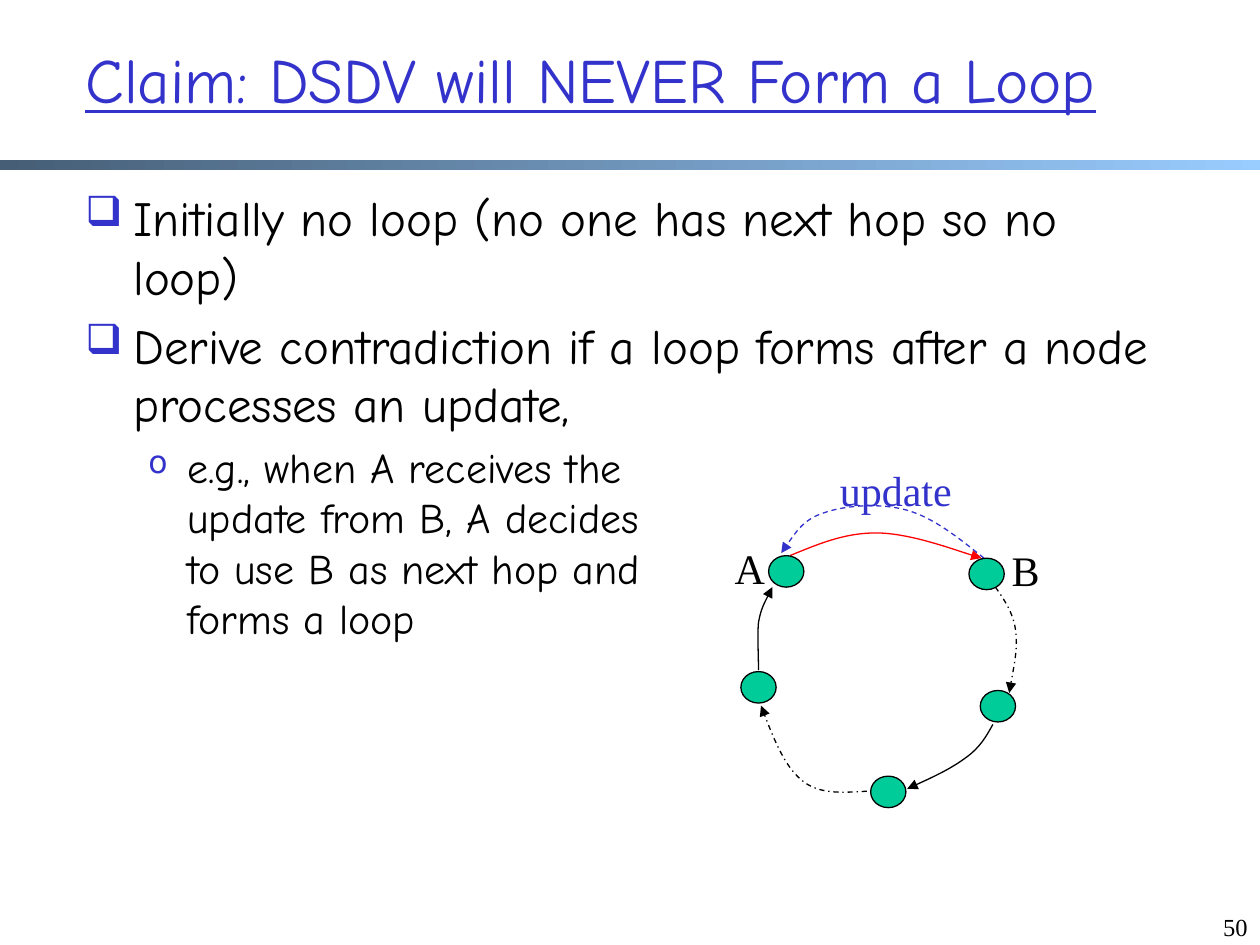
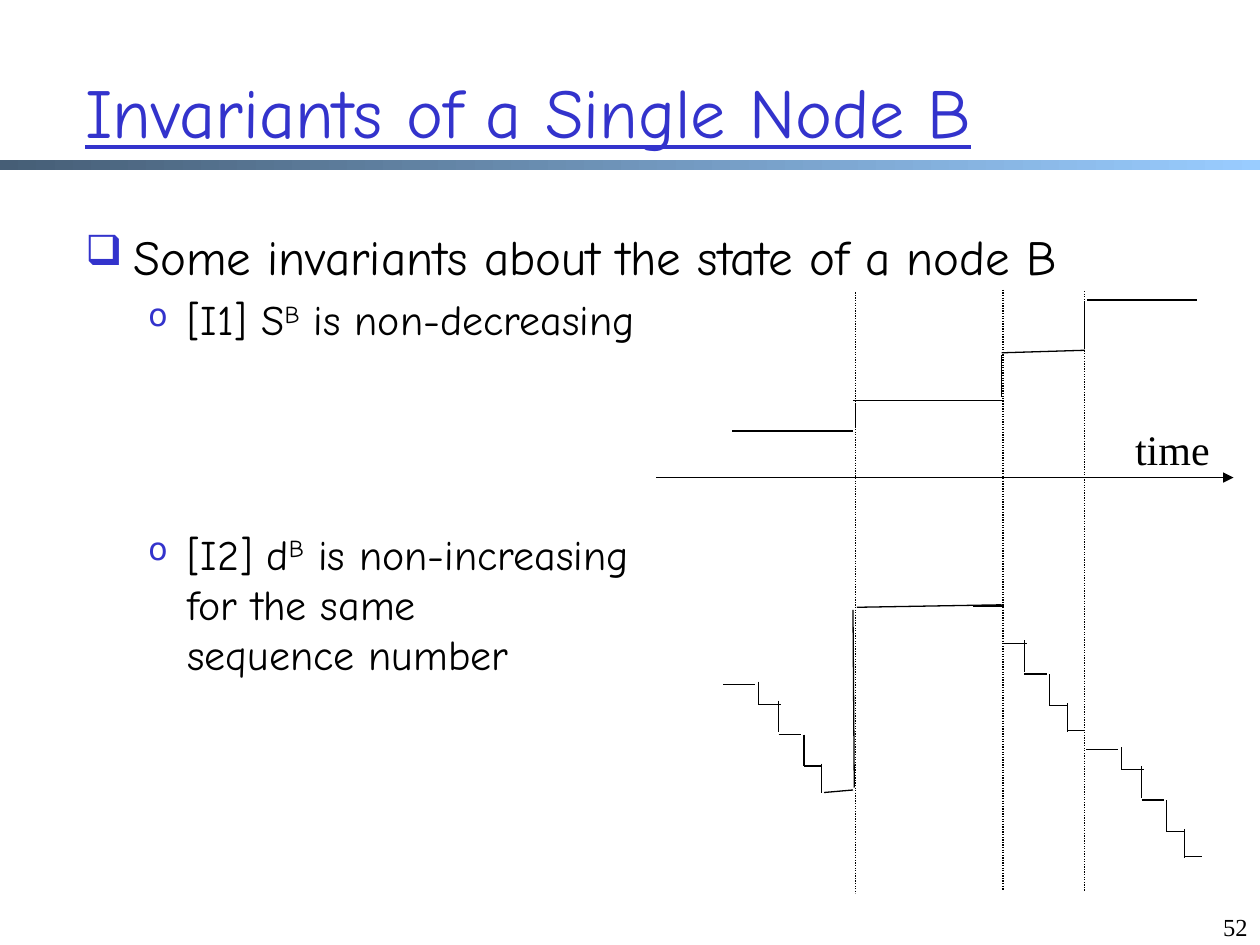
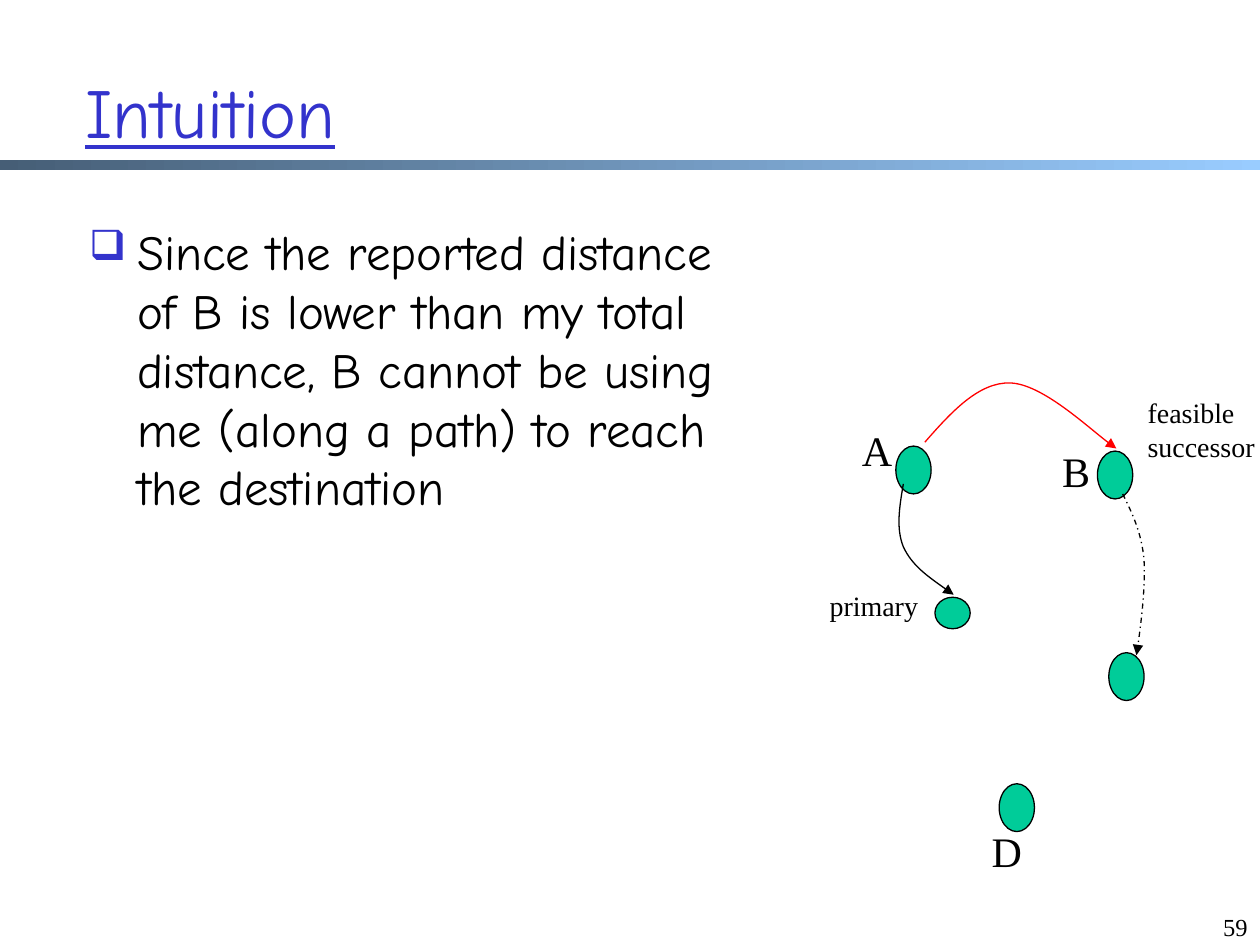
import lxml.etree
import pptx
import pptx.dml.color
import pptx.enum.dml
import pptx.enum.shapes
import pptx.enum.text
import pptx.oxml.ns
import pptx.util

COLUMNS, ROWS = 100, 75
INK, BLUE, RED, GREEN = "000000", "3333CC", "FF0000", "00CC99"
BAND_DARK, BAND_LIGHT = "465E76", "99CCFF"
HEADING_FONT, LABEL_FONT = "Comic Neue", "Times New Roman"
DASH = pptx.enum.dml.MSO_LINE.DASH
DASH_DOT = pptx.enum.dml.MSO_LINE.DASH_DOT
DOTTED = pptx.enum.dml.MSO_LINE.ROUND_DOT
LEFT, CENTER, RIGHT = (pptx.enum.text.PP_ALIGN.LEFT, pptx.enum.text.PP_ALIGN.CENTER,
                       pptx.enum.text.PP_ALIGN.RIGHT)
LEVELS = [
    {"char": "❑", "scale": 85, "size": 28, "margin": 0.38, "hang": 0.38},
    {"char": "o", "scale": 75, "size": 24, "margin": 0.81, "hang": 0.31},
]
STAIR = [
    (0, 0, 2.5, 0), (2.8, -0.2, 2.8, 1.6),
    (2.8, 1.6, 4.6, 1.6), (4.4, 1.3, 4.4, 3.8),
    (4.4, 4, 6.2, 4), (6.4, 4, 6.4, 6.5),
    (6.4, 6.5, 7.8, 6.5), (7.8, 6.3, 7.8, 8.6),
    (7.8, 8.5, 9.2, 8.5),
]


def color(value):
    return pptx.dml.color.RGBColor.from_string(value)


def add_xml(parent, tag, **attributes):
    return lxml.etree.SubElement(parent, pptx.oxml.ns.qn(tag), attributes)


class Deck:
    def __init__(self):
        self.presentation = pptx.Presentation()
        self.presentation.slide_width = pptx.util.Inches(10)
        self.presentation.slide_height = pptx.util.Inches(7.5)
        self.slide = None

    def x(self, columns):
        return round(self.presentation.slide_width * columns / COLUMNS)

    def y(self, rows):
        return round(self.presentation.slide_height * rows / ROWS)

    def box(self, left, top, width, height):
        return self.x(left), self.y(top), self.x(width), self.y(height)

    def start(self, title, number, area=(5.8, 2.5, 87.8, 12.5), size=40):
        self.slide = self.presentation.slides.add_slide(self.presentation.slide_layouts[6])
        self.band()
        self.label(title, area, size, BLUE, LEFT, HEADING_FONT, underline=True,
                   anchor=pptx.enum.text.MSO_ANCHOR.MIDDLE)
        self.label(str(number), (92.5, 71.9, 7.5, 3.1), 14, align=RIGHT)

    def band(self):
        band = self.slide.shapes.add_shape(
            pptx.enum.shapes.MSO_SHAPE.RECTANGLE, *self.box(0, 12.7, COLUMNS, 0.8))
        band.shadow.inherit = False
        band.line.fill.background()
        band.fill.gradient()
        band.fill.gradient_angle = 0
        for stop, shade in zip(band.fill.gradient_stops, (BAND_DARK, BAND_LIGHT)):
            stop.color.rgb = color(shade)

    def text_frame(self, area):
        frame = self.slide.shapes.add_textbox(*self.box(*area)).text_frame
        frame.word_wrap = True
        return frame

    def style(self, font, name, size, shade):
        font.name = name
        font.size = pptx.util.Pt(size)
        font.color.rgb = color(shade)

    def label(self, text, area, size=24, shade=INK, align=CENTER, font=LABEL_FONT,
              underline=None, anchor=pptx.enum.text.MSO_ANCHOR.TOP):
        frame = self.text_frame(area)
        frame.vertical_anchor = anchor
        frame.text = text
        paragraph = frame.paragraphs[0]
        paragraph.alignment = align
        for run in paragraph.runs:
            self.style(run.font, font, size, shade)
            run.font.underline = underline

    def bullets(self, area, items):
        frame = self.text_frame(area)
        for index, (level, text, *gap) in enumerate(items):
            paragraph = frame.add_paragraph() if index else frame.paragraphs[0]
            self.bullet(paragraph, level, *gap)
            for part_index, part in enumerate(text.split("^")):
                for line_index, line in enumerate(part.split("\n")):
                    if line_index:
                        paragraph.add_line_break()
                    run = paragraph.add_run()
                    run.text = line
                    self.style(run.font, HEADING_FONT, LEVELS[level]["size"], INK)
                    if part_index % 2:
                        run.font._element.set("baseline", "30000")

    def bullet(self, paragraph, level, gap=None):
        mark = LEVELS[level]
        paragraph.level = level
        properties = paragraph._p.get_or_add_pPr()
        properties.set("marL", str(pptx.util.Inches(mark["margin"])))
        properties.set("indent", str(-pptx.util.Inches(mark["hang"])))
        if gap:
            paragraph.space_before = pptx.util.Pt(gap)
        else:
            add_xml(add_xml(properties, "a:spcBef"), "a:spcPct", val="20000")
        add_xml(add_xml(properties, "a:buClr"), "a:srgbClr", val=BLUE)
        add_xml(properties, "a:buSzPct", val=str(mark["scale"] * 1000))
        add_xml(properties, "a:buChar", char=mark["char"])

    def node(self, left, top, height=2.5):
        node = self.slide.shapes.add_shape(
            pptx.enum.shapes.MSO_SHAPE.OVAL, *self.box(left, top, 2.8, height))
        node.shadow.inherit = False
        node.fill.solid()
        node.fill.fore_color.rgb = color(GREEN)
        self.stroke(node)

    def stroke(self, shape, shade=INK, dash=None, arrow=False):
        shape.line.color.rgb = color(shade)
        shape.line.width = pptx.util.Pt(0.75)
        if dash:
            shape.line.dash_style = dash
        if arrow:
            add_xml(shape.line._get_or_add_ln(), "a:tailEnd", type="triangle")

    def line(self, x1, y1, x2, y2, dash=None, arrow=False):
        line = self.slide.shapes.add_connector(
            pptx.enum.shapes.MSO_CONNECTOR.STRAIGHT,
            self.x(x1), self.y(y1), self.x(x2), self.y(y2))
        self.stroke(line, dash=dash, arrow=arrow)
        add_xml(line._element.spPr, "a:effectLst")

    def stairs(self, left, top, steps):
        for x1, y1, x2, y2 in steps:
            self.line(left + x1, top + y1, left + x2, top + y2)

    def curve(self, points, shade=INK, dash=None):
        start, *controls = [(self.x(column), self.y(row)) for column, row in points]
        builder = self.slide.shapes.build_freeform(*start)
        builder.add_line_segments(controls, close=False)
        arc = builder.convert_to_shape()
        segments = list(arc._element.iter(pptx.oxml.ns.qn("a:lnTo")))
        outline = segments[0].getparent()
        for first in range(0, len(segments), 3):
            bezier = add_xml(outline, "a:cubicBezTo")
            for segment in segments[first:first + 3]:
                bezier.append(segment[0])
                outline.remove(segment)
        arc.shadow.inherit = False
        arc.fill.background()
        self.stroke(arc, shade, dash, arrow=True)


def loop_claim(deck):
    deck.start("Claim: DSDV will NEVER Form a Loop", 50, (5.8, 0, 91.1, 12.5), 36)
    deck.bullets((5.8, 14.4, 88.1, 56.2), [
        (0, "Initially no loop (no one has next hop so no loop)"),
        (0, "Derive contradiction if a loop forms after a node processes an update,"),
        (1, "e.g., when A receives the\nupdate from B, A decides\n"
            "to use B as next hop and\nforms a loop"),
    ])
    deck.curve([(62.7, 44.1), (64.9, 43.2), (67, 42.3), (69.5, 42.3),
                (72.1, 42.3), (76.5, 43.9), (77.9, 44.3)], RED)
    deck.curve([(78.1, 44.3), (76.1, 42.7), (74.1, 41.1), (72, 40.5),
                (69.9, 39.9), (67.1, 40.1), (65.4, 40.7),
                (63.8, 41.2), (62.9, 42.6), (62, 43.9)], BLUE, DASH)
    for left, top in [(61, 44.1), (76.9, 44.3), (77.8, 54.8), (69.1, 61.6), (58.8, 53.3)]:
        deck.node(left, top)
    deck.curve([(78.8, 57.5), (78.3, 58.4), (77.8, 59.3), (76.7, 60.1),
                (75.5, 61), (73.8, 61.8), (72, 62.6)])
    deck.curve([(60.2, 53.2), (60.2, 51.8), (60.1, 50.5), (60.2, 49.4),
                (60.4, 48.3), (60.9, 47.4), (61.3, 46.6)])
    deck.curve([(79, 46.6), (79.7, 47.6), (80.4, 48.6), (80.6, 50),
                (80.8, 51.4), (80.4, 53.2), (80.1, 55)], dash=DASH_DOT)
    deck.curve([(68.8, 62.8), (66.9, 62.9), (65, 63.1), (63.6, 61.9),
                (62.3, 60.8), (61.3, 58.4), (60.4, 56)], dash=DASH_DOT)
    deck.label("A", (57.3, 42.6, 4.4, 5))
    deck.label("B", (79.2, 42.7, 4.4, 5))
    deck.label("update", (65.6, 36.4, 11, 5), shade=BLUE)


def node_invariants(deck):
    deck.start("Invariants of a Single Node B", 52)
    deck.bullets((5.8, 17.5, 88.1, 53.1), [
        (0, "Some invariants about the state of a node B"),
        (1, "[I1] S^B^ is non-decreasing"),
        (1, "[I2] d^B^ is non-increasing\nfor the same\nsequence number", 105),
    ])
    for change, top, bottom in [(67.9, 23.2, 70.9), (79.6, 23, 70.6), (86.1, 23.1, 70.7)]:
        deck.line(change, top, change, bottom, DOTTED)
    sequence_number = [
        (58.1, 34.2, 67.7, 34.2), (67.9, 33.9, 67.9, 32.1), (67.7, 31.8, 79.7, 31.8),
        (79.5, 31.5, 79.5, 28.2), (79.5, 28, 86.1, 27.8), (86.1, 27.7, 86.1, 23.9),
        (86.3, 23.8, 95, 23.8),
    ]
    distance_reset = [
        (65.4, 62.9, 67.7, 62.7), (67.8, 62.5, 67.7, 48.4), (68, 48.2, 79.5, 48),
        (77.2, 48.1, 79.7, 48.1),
    ]
    for segment in sequence_number + distance_reset:
        deck.line(*segment)
    deck.stairs(57.4, 54.3, STAIR[:-1])
    deck.stairs(76.9, 49.5, STAIR[2:])
    deck.stairs(86.2, 59.5, STAIR)
    deck.line(52.1, 37.9, 97.9, 37.9, arrow=True)
    deck.label("time", (89.1, 33.1, 7.9, 5))


def intuition(deck):
    deck.start("Intuition", 59)
    deck.bullets((6.1, 17.1, 54.9, 53.1), [
        (0, "Since the reported distance of B is lower than my total distance, "
            "B cannot be using me (along a path) to reach the destination"),
    ])
    deck.curve([(73.4, 35.1), (75.5, 32.7), (77.7, 30.3), (80.2, 30.4),
                (82.7, 30.5), (87.2, 34.7), (88.6, 35.6)], RED)
    for left, top in [(71.1, 35.4), (87.1, 35.8), (88, 51.8), (79.3, 62.2)]:
        deck.node(left, top, 3.8)
    deck.node(74.2, 47.4)
    deck.curve([(89.1, 39.2), (89.9, 40.8), (90.6, 42.3), (90.8, 44.4),
                (90.9, 46.5), (90.6, 49.3), (90.2, 52)], dash=DASH_DOT)
    deck.curve([(71.7, 38.4), (71.4, 40.2), (71.1, 41.9), (71.7, 43.4),
                (72.4, 44.9), (74, 46), (75.7, 47.2)])
    deck.label("A", (67.4, 33.2, 4.4, 5))
    deck.label("B", (83.2, 34.9, 4.4, 5))
    deck.label("D", (77.7, 65, 4.4, 5))
    deck.label("feasible successor", (90.1, 30.9, 11.9, 9.7), 16, align=LEFT)
    deck.label("primary", (63.4, 46.2, 11.9, 3.7), 16)


def main():
    deck = Deck()
    for build in (loop_claim, node_invariants, intuition):
        build(deck)
    deck.presentation.save("out.pptx")


if __name__ == "__main__":
    main()
